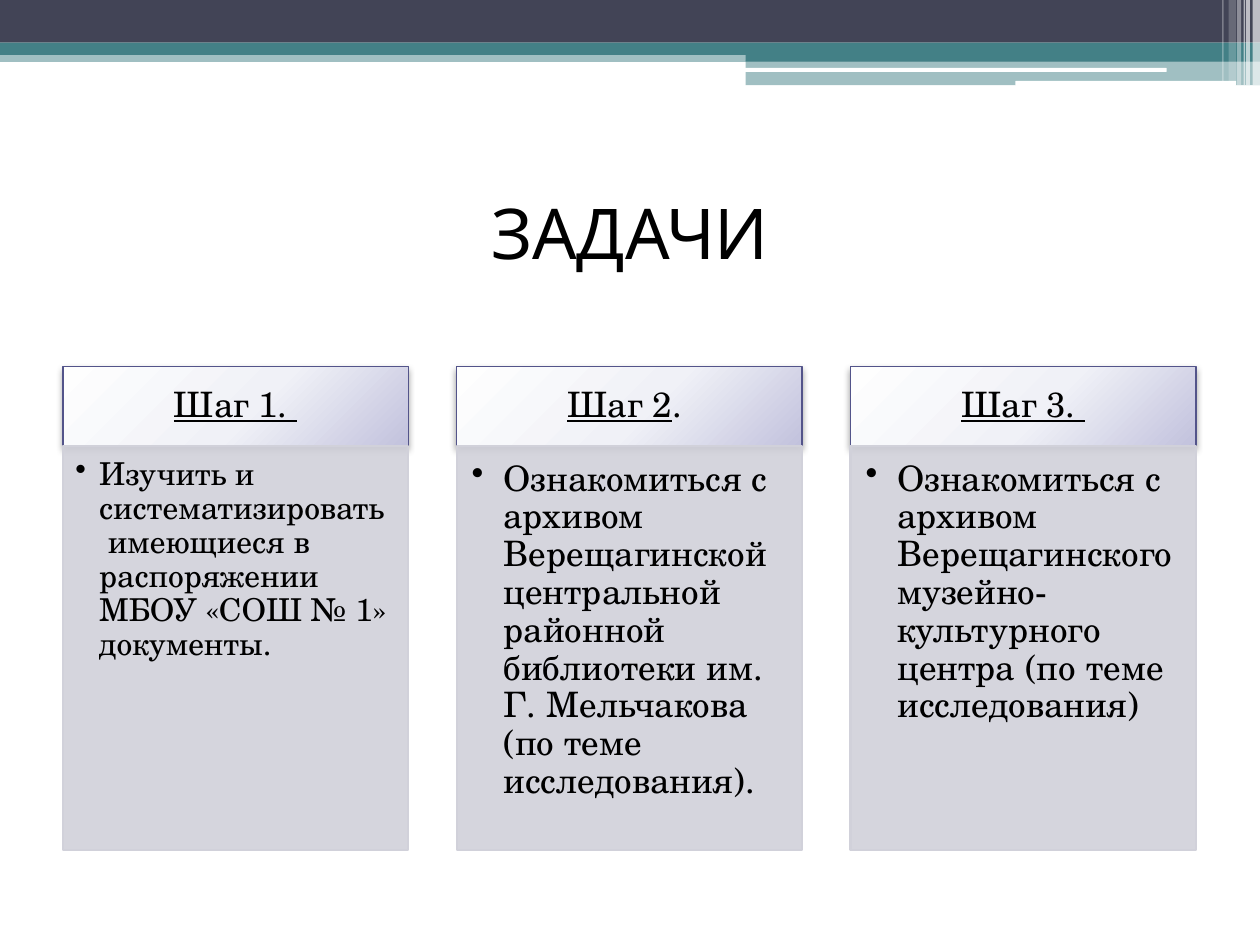
import pptx
import pptx.util
import pptx.dml.color
import pptx.enum.shapes
import pptx.enum.text
import pptx.oxml
import pptx.oxml.ns

Cm = pptx.util.Cm
Pt = pptx.util.Pt
RECTANGLE = pptx.enum.shapes.MSO_SHAPE.RECTANGLE
ROUNDED = pptx.enum.shapes.MSO_SHAPE.ROUNDED_RECTANGLE
MIDDLE = pptx.enum.text.MSO_ANCHOR.MIDDLE
TOP = pptx.enum.text.MSO_ANCHOR.TOP
CENTER = pptx.enum.text.PP_ALIGN.CENTER
LEFT = pptx.enum.text.PP_ALIGN.LEFT
NAMESPACE = pptx.oxml.ns.nsdecls("a")


def colour(hex_string):
    return pptx.dml.color.RGBColor.from_string(hex_string)


def add_box(kind, left, top, width, height, fill, opacity=100):
    shape = slide.shapes.add_shape(kind, Cm(left), Cm(top), Cm(width), Cm(height))
    shape.shadow.inherit = False
    shape.line.fill.background()
    shape.fill.solid()
    shape.fill.fore_color.rgb = colour(fill)
    if opacity < 100:
        alpha = pptx.oxml.parse_xml(f'<a:alpha {NAMESPACE} val="{opacity * 1000}"/>')
        shape._element.spPr.find(".//" + pptx.oxml.ns.qn("a:srgbClr")).append(alpha)
    return shape


presentation = pptx.Presentation()
presentation.slide_width = Cm(25.4)
presentation.slide_height = Cm(19.05)
slide = presentation.slides.add_slide(presentation.slide_layouts[5])

decoration = [
    (RECTANGLE, 0, 1.02, 25.4, 0.23, "438086", 50),
    (RECTANGLE, 0, 0, 25.4, 0.86, "424456", 100),
    (RECTANGLE, 0, 0.86, 25.4, 0.25, "438086", 100),
    (RECTANGLE, 15.03, 0.99, 10.37, 0.25, "438086", 100),
    (RECTANGLE, 15.03, 1.22, 10.37, 0.5, "438086", 50),
    (ROUNDED, 15.01, 1.37, 8.51, 0.08, "FFFFFF", 100),
    (ROUNDED, 20.47, 1.63, 4.45, 0.1, "FFFFFF", 100),
    (RECTANGLE, 25.25, 0, 0.15, 1.72, "FFFFFF", 65),
    (RECTANGLE, 25.12, 0, 0.08, 1.72, "FFFFFF", 65),
    (RECTANGLE, 25.07, 0, 0.03, 1.72, "FFFFFF", 60),
    (RECTANGLE, 24.94, 0, 0.08, 1.72, "FFFFFF", 40),
    (RECTANGLE, 24.77, 0, 0.15, 1.63, "FFFFFF", 20),
    (RECTANGLE, 24.64, 0, 0.03, 1.63, "FFFFFF", 30),
]
for band in decoration:
    add_box(*band)

title = slide.shapes.title
title_place = {"left": Cm(1.27), "top": Cm(3.18), "width": Cm(22.86), "height": Cm(2.97)}
for name, value in title_place.items():
    setattr(title, name, value)
title.text_frame.text = "ЗАДАЧИ"
title.text_frame.vertical_anchor = MIDDLE
title_paragraph = title.text_frame.paragraphs[0]
title_paragraph.alignment = CENTER
title_font = title_paragraph.runs[0].font
for name, value in {"name": "Karla", "size": Pt(40)}.items():
    setattr(title_font, name, value)
title_font.color.rgb = colour("000000")

steps = [
    ([("Шаг 1. ", True)], 18, 0.48, (0.25, 0.25, 0.36, 0.41),
     "Изучить и систематизировать  имеющиеся в распоряжении МБОУ «СОШ № 1» документы."),
    ([("Шаг 2", True), (". ", False)], 20, 0.64, (0.3, 0.3, 0.41, 0.43),
     "Ознакомиться с архивом Верещагинской центральной районной библиотеки "
     "им. Г. Мельчакова (по теме исследования)."),
    ([("Шаг 3. ", True)], 20, 0.64, (0.3, 0.3, 0.41, 0.43),
     "Ознакомиться с архивом Верещагинского музейно-культурного центра "
     "(по теме исследования)"),
]
gradient_stops = "".join(
    f'<a:gs pos="{position * 1000}"><a:srgbClr val="{stop}"/></a:gs>'
    for position, stop in [(0, "FEFEFE"), (55, "F0F1F7"), (100, "C2C2DD")]
)
gradient_xml = (
    f'<a:gradFill {NAMESPACE} rotWithShape="1"><a:gsLst>{gradient_stops}</a:gsLst>'
    '<a:path path="circle"><a:fillToRect l="-40000" t="-90000" r="140000" b="190000"/>'
    "</a:path></a:gradFill>"
)
shadow_xml = (
    f'<a:outerShdw {NAMESPACE} blurRad="{Pt(4.1)}" dist="{Pt(2)}" dir="5400000" '
    'rotWithShape="0"><a:srgbClr val="000000"><a:alpha val="40000"/></a:srgbClr></a:outerShdw>'
)
column_width, column_pitch = 6.96, 7.94

for index, (heading_runs, body_size, indent, body_margins, body_text) in enumerate(steps):
    left = 1.27 + index * column_pitch
    heading = add_box(RECTANGLE, left, 7.39, column_width, 1.6, "FEFEFE")
    properties = heading._element.spPr
    properties.replace(properties.find(pptx.oxml.ns.qn("a:solidFill")),
                       pptx.oxml.parse_xml(gradient_xml))
    properties.find(pptx.oxml.ns.qn("a:effectLst")).append(pptx.oxml.parse_xml(shadow_xml))
    body = add_box(RECTANGLE, left, 8.99, column_width, 8.15, "D1D1DA", 90)

    parts = [
        (heading, "53548A", 0.75, MIDDLE, CENTER, 7, (0.41, 0.23, 0.41, 0.23), 20, heading_runs),
        (body, "D1D1DA", 1.5, TOP, LEFT, 3, body_margins, body_size, [(body_text, False)]),
    ]
    for shape, line, line_width, anchor, alignment, after, margins, size, runs in parts:
        shape.line.color.rgb = colour(line)
        shape.line.width = Pt(line_width)
        frame = shape.text_frame
        frame_format = {"word_wrap": True, "vertical_anchor": anchor}
        sides = ("margin_left", "margin_top", "margin_right", "margin_bottom")
        frame_format.update(zip(sides, map(Cm, margins)))
        for name, value in frame_format.items():
            setattr(frame, name, value)
        paragraph = frame.paragraphs[0]
        paragraph_format = {"alignment": alignment, "line_spacing": 0.9, "space_after": Pt(after)}
        for name, value in paragraph_format.items():
            setattr(paragraph, name, value)
        for text, underline in runs:
            run = paragraph.add_run()
            run.text = text
            run_format = {"name": "TeX Gyre Schola", "size": Pt(size), "underline": underline}
            for name, value in run_format.items():
                setattr(run.font, name, value)
            run.font.color.rgb = colour("000000")

    bullet_paragraph = body.text_frame.paragraphs[0]
    bullet_paragraph.level = 1
    bullet_properties = bullet_paragraph._p.get_or_add_pPr()
    bullet_properties.set("marL", str(Cm(indent)))
    bullet_properties.set("indent", str(-Cm(indent)))
    bullet_properties.append(pptx.oxml.parse_xml(f'<a:buChar {NAMESPACE} char="•"/>'))

presentation.save("out.pptx")
